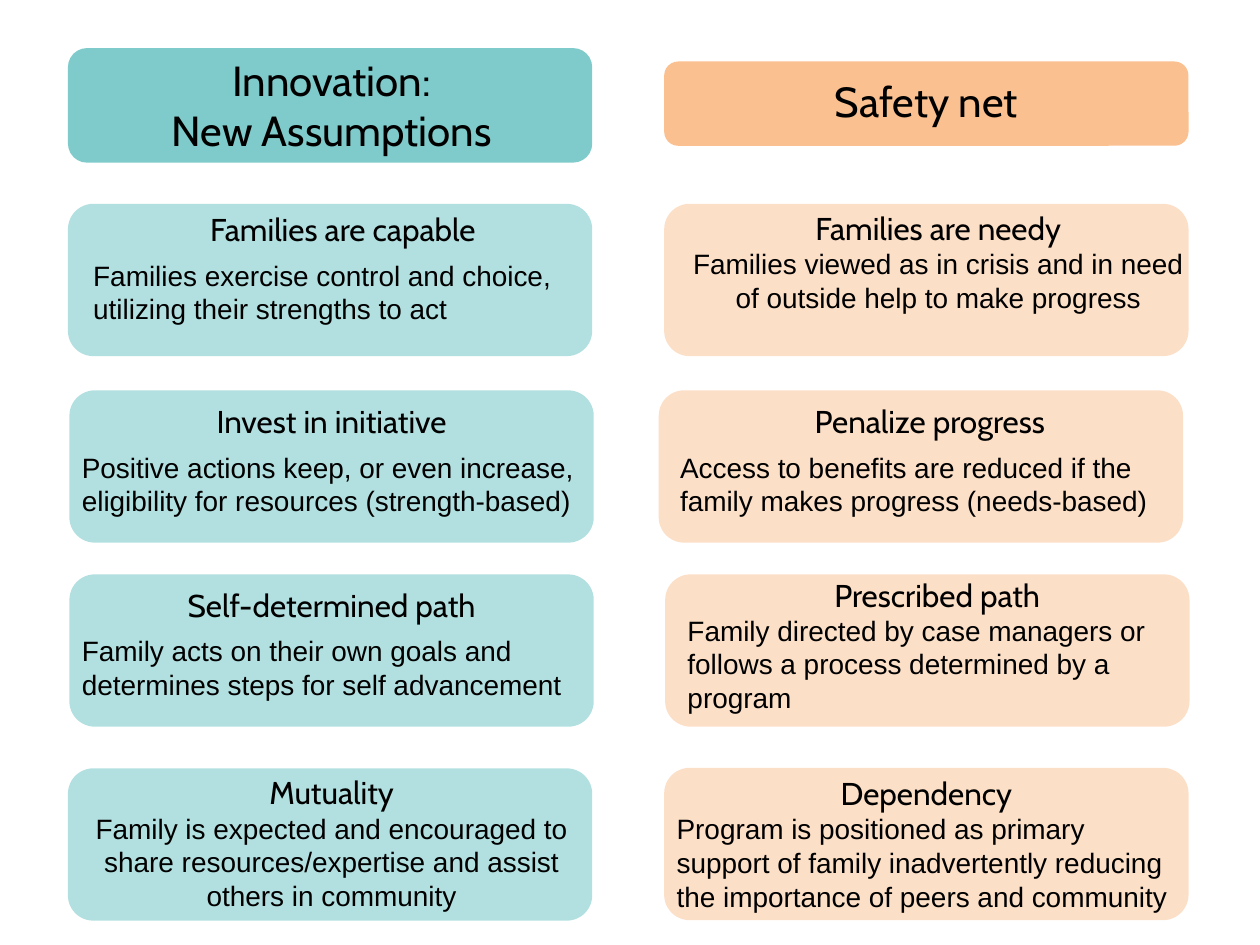
from dataclasses import dataclass

from lxml import etree
from pptx import Presentation
from pptx.dml.color import RGBColor
from pptx.enum.shapes import MSO_SHAPE
from pptx.enum.text import MSO_ANCHOR, PP_ALIGN
from pptx.oxml.ns import qn
from pptx.util import Cm, Pt

ROUNDED = MSO_SHAPE.ROUNDED_RECTANGLE
TOP, MIDDLE = MSO_ANCHOR.TOP, MSO_ANCHOR.MIDDLE
LEFT, CENTER = PP_ALIGN.LEFT, PP_ALIGN.CENTER


@dataclass(frozen=True)
class Theme:
    teal: RGBColor = RGBColor(0x00, 0x99, 0x99)
    orange: RGBColor = RGBColor(0xFA, 0xC0, 0x90)
    ink: RGBColor = RGBColor(0x00, 0x00, 0x00)
    heading_font: str = "Cabin"
    body_font: str = "Arial"
    title_size: Pt = Pt(24)
    heading_size: Pt = Pt(18)
    body_size: Pt = Pt(16)


theme = Theme()
CARD_WIDTH, CARD_HEIGHT = 10.57, 3.07

prs = Presentation()
prs.slide_width, prs.slide_height = Cm(25.4), Cm(19.05)
slide = prs.slides.add_slide(prs.slide_layouts[6])


def add_panel(left, top, height, color, opacity):
    panel = slide.shapes.add_shape(
        ROUNDED, Cm(left), Cm(top), Cm(CARD_WIDTH), Cm(height))
    panel.shadow.inherit = False
    panel.fill.solid()
    panel.fill.fore_color.rgb = color
    panel.line.fill.background()
    if opacity < 100:
        tint = panel.fill._xPr.find(".//" + qn("a:srgbClr"))
        etree.SubElement(tint, qn("a:alpha"), val=str(opacity * 1000))


def add_text(left, top, width, height, lines, anchor=TOP):
    """Each line is (text, font name, size, alignment, space before)."""
    frame = slide.shapes.add_textbox(
        Cm(left), Cm(top), Cm(width), Cm(height)).text_frame
    frame.word_wrap = True
    frame.vertical_anchor = anchor
    for i, (text, font, size, alignment, gap) in enumerate(lines):
        paragraph = frame.add_paragraph() if i else frame.paragraphs[0]
        paragraph.text = text
        paragraph.alignment = alignment
        if gap:
            paragraph.space_before = Pt(gap)
        paragraph.font.name = font
        paragraph.font.size = size
        paragraph.font.color.rgb = theme.ink


# Column titles: panel (left, top, height), text (left, top, height)
titles = [
    ((1.37, 0.97, 2.31), (1.4, 0.97, 2.31), theme.teal, 50,
     ["Innovation:", "New Assumptions"]),
    ((13.39, 1.24, 1.7), (13.39, 1.4, 1.3), theme.orange, 100,
     ["Safety net"]),
]
for (left, top, height), (text_left, text_top, text_height), color, opacity, words in titles:
    add_panel(left, top, height, color, opacity)
    add_text(text_left, text_top, CARD_WIDTH, text_height,
             [(line, theme.heading_font, theme.title_size, CENTER, 0)
              for line in words])

# Cards: panel (left, top), text (left, top, width, height),
# heading, body, body alignment, gap above body, anchor
innovation_cards = [
    ((1.37, 4.11), (1.63, 4.11, CARD_WIDTH, 2.62), "Families are capable",
     "Families exercise control and choice, utilizing their strengths to act",
     LEFT, 6, TOP),
    ((1.4, 7.87), (1.4, 7.98, CARD_WIDTH, 2.62), "Invest in initiative",
     "Positive actions keep, or even increase, eligibility for resources "
     "(strength-based)", LEFT, 6, TOP),
    ((1.4, 11.58), (1.4, 11.68, CARD_WIDTH, 2.62), "Self-determined path",
     "Family acts on their own goals and determines steps for self advancement",
     LEFT, 6, TOP),
    ((1.37, 15.49), (1.4, 15.32, CARD_WIDTH, 3.33), "Mutuality",
     "Family is expected and encouraged to share resources/expertise and "
     "assist others in community", CENTER, 0, MIDDLE),
]
safety_net_cards = [
    ((13.39, 4.11), (13.72, 4.09, 10.39, 2.39), "Families are needy",
     "Families viewed as in crisis and in need of outside help to make progress",
     CENTER, 0, TOP),
    ((13.28, 7.87), (13.46, 7.98, CARD_WIDTH, 2.62), "Penalize progress",
     "Access to benefits are reduced if the family makes progress (needs-based)",
     LEFT, 6, TOP),
    ((13.41, 11.58), (13.61, 11.48, CARD_WIDTH, 3.07), "Prescribed path",
     "Family directed by case managers or follows a process determined by a "
     "program", LEFT, 0, TOP),
    ((13.39, 15.48), (13.39, 15.48, CARD_WIDTH, 3.07), "Dependency",
     "Program is positioned as primary support of family inadvertently "
     "reducing the importance of peers and community", LEFT, 0, TOP),
]
columns = [(theme.teal, 30, innovation_cards),
           (theme.orange, 50, safety_net_cards)]
for color, opacity, cards in columns:
    for corner, text_area, heading, body, alignment, gap, anchor in cards:
        add_panel(*corner, CARD_HEIGHT, color, opacity)
        add_text(*text_area, [
            (heading, theme.heading_font, theme.heading_size, CENTER, 0),
            (body, theme.body_font, theme.body_size, alignment, gap),
        ], anchor)

prs.save("out.pptx")
